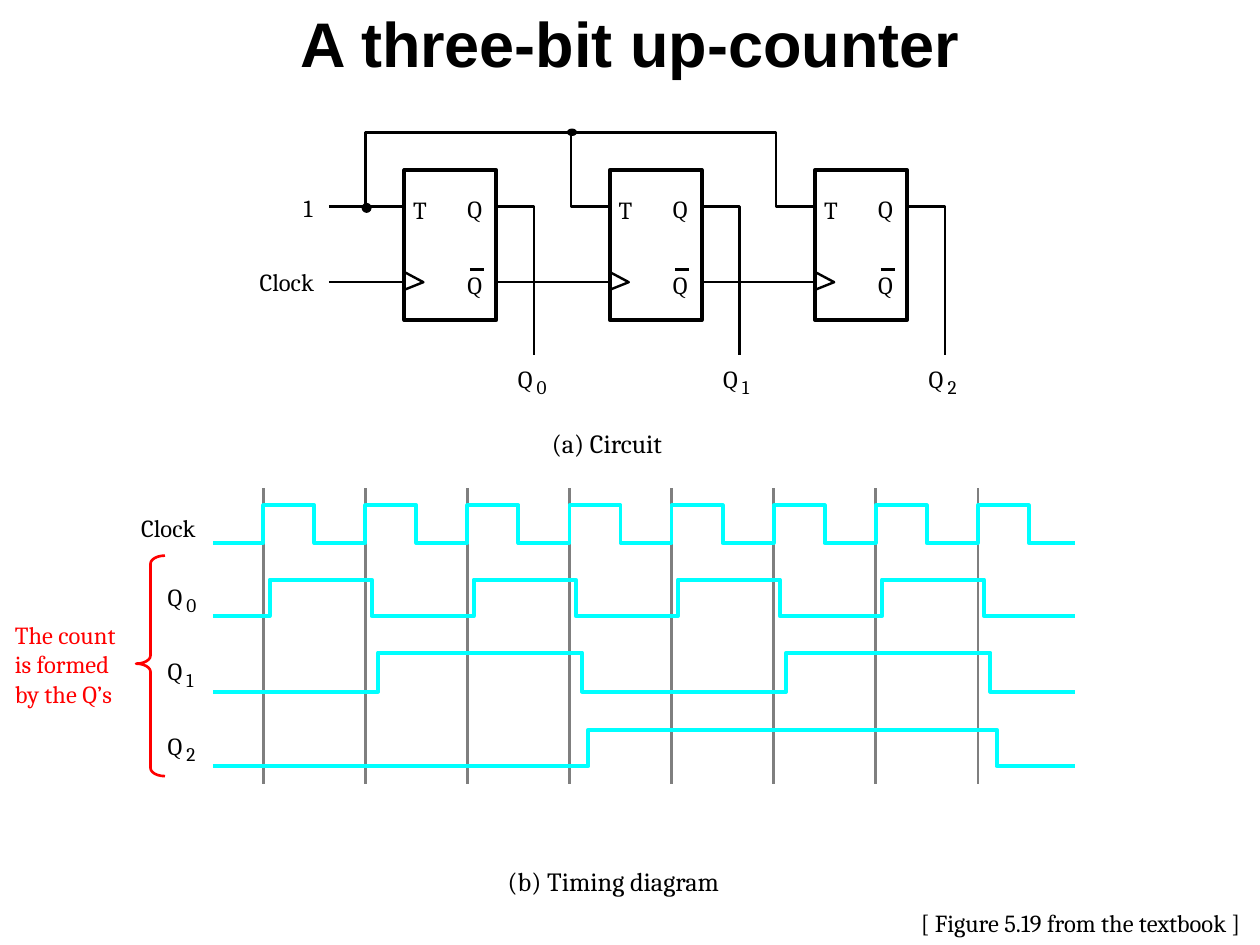
"""Build a slide showing a three-bit up-counter circuit and its timing diagram."""
from lxml import etree
from pptx import Presentation
from pptx.dml.color import RGBColor
from pptx.enum.shapes import MSO_CONNECTOR, MSO_SHAPE
from pptx.enum.text import MSO_ANCHOR, PP_ALIGN
from pptx.oxml.ns import qn
from pptx.util import Inches, Pt

STRAIGHT = MSO_CONNECTOR.STRAIGHT
RECTANGLE, OVAL, BRACE = MSO_SHAPE.RECTANGLE, MSO_SHAPE.OVAL, MSO_SHAPE.LEFT_BRACE
MIDDLE, TOP = MSO_ANCHOR.MIDDLE, MSO_ANCHOR.TOP
CENTER, LEFT = PP_ALIGN.CENTER, PP_ALIGN.LEFT
BLACK = RGBColor(0x00, 0x00, 0x00)
WHITE = RGBColor(0xFF, 0xFF, 0xFF)
GRAY = RGBColor(0x7F, 0x7F, 0x7F)
CYAN = RGBColor(0x00, 0xFF, 0xFF)
RED = RGBColor(0xFF, 0x00, 0x00)

TITLE = "A three-bit up-counter"
SOURCE = "[ Figure 5.19 from the textbook ]"
NOTE = ["The count", "is formed", "by the Q’s"]
LABELS = [
    ("1", 2.41, 1.53, 0.23, 14),
    ("Clock", 2.06, 2.12, 0.59, 14),
    ("(a) Circuit", 4.38, 3.39, 1.06, 15),
    ("Clock", 1.12, 4.07, 0.59, 14),
    ("(b) Timing diagram", 4.03, 6.87, 1.84, 15),
]
PIN_LABELS = [("T", 0.07, 1.55), ("Q", 0.5, 1.54), ("Q", 0.5, 2.14)]
STAGES = 3
FLIP_LEFT, FLIP_PITCH, FLIP_WIDTH, FLIP_TOP, FLIP_HEIGHT = 3.21, 1.63, 0.73, 1.35, 1.19
BUS_Y, DATA_Y, CLOCK_Y, OUTPUT_Y = 1.05, 1.64, 2.24, 2.82
INPUT_X, TAP_X = 2.61, 2.9
WIRE = 1.38
PERIOD, FIRST_EDGE, CYCLES = 0.81, 2.09, 8
WAVE_START, WAVE_END = 1.69, 8.53
CLOCK_LEVELS = (4.31, 4.01)
Q_LEVELS = [(4.89, 4.6), (5.49, 5.18), (6.08, 5.79)]
DELAY = 0.05


def write(frame, lines, size=14, color=BLACK, font="Cambria", bold=False,
          align=LEFT, anchor=TOP, inset=(0, 0)):
    """Fill a text frame with formatted lines."""
    frame.word_wrap = True
    frame.vertical_anchor = anchor
    frame.margin_left = frame.margin_right = Inches(inset[0])
    frame.margin_top = frame.margin_bottom = Inches(inset[1])
    for index, line in enumerate(lines):
        para = frame.paragraphs[0] if index == 0 else frame.add_paragraph()
        para.alignment = align
        span = para.add_run()
        span.text = line
        span.font.name, span.font.size, span.font.bold = font, Pt(size), bold
        span.font.color.rgb = color


def add_text(page, lines, left, top, width, height=0.26, **style):
    box = page.shapes.add_textbox(*map(Inches, (left, top, width, height)))
    write(box.text_frame, lines, **style)


def add_line(page, start, end, color=BLACK, weight=WIRE):
    line = page.shapes.add_connector(STRAIGHT, *map(Inches, start + end))
    line.line.color.rgb, line.line.width = color, Pt(weight)
    etree.SubElement(line._element.spPr, qn("a:effectLst"))


def finish(shape, fill, color, weight):
    shape.shadow.inherit = False
    if fill is None:
        shape.fill.background()
    else:
        shape.fill.solid()
        shape.fill.fore_color.rgb = fill
    shape.line.color.rgb, shape.line.width = color, Pt(weight)


def add_path(page, points, color=BLACK, weight=WIRE):
    corners = [(Inches(x), Inches(y)) for x, y in points]
    builder = page.shapes.build_freeform(*corners[0])
    builder.add_line_segments(corners[1:], close=False)
    finish(builder.convert_to_shape(), None, color, weight)


def add_preset(page, kind, left, top, width, height, fill=None, color=BLACK, weight=WIRE):
    shape = page.shapes.add_shape(kind, *map(Inches, (left, top, width, height)))
    finish(shape, fill, color, weight)
    return shape


def add_output_name(page, stage, left, top):
    add_text(page, ["Q"], left, top, 0.27)
    add_text(page, [str(stage)], left + 0.15, top + 0.09, 0.18, 0.21, size=11)


def add_wave(page, levels, edges):
    """Draw a signal that starts low and toggles at each edge."""
    points = [(WAVE_START, levels[0])]
    for index, x in enumerate(edges):
        points += [(x, levels[index % 2]), (x, levels[(index + 1) % 2])]
    points.append((WAVE_END, levels[len(edges) % 2]))
    add_path(page, points, CYAN, 2.25)


def draw_circuit(page):
    lefts = [FLIP_LEFT + FLIP_PITCH * stage for stage in range(STAGES)]
    for stage, left in enumerate(lefts):
        right = left + FLIP_WIDTH
        add_preset(page, RECTANGLE, left, FLIP_TOP, FLIP_WIDTH, FLIP_HEIGHT, WHITE, weight=2.25)
        for name, offset, top in PIN_LABELS:
            add_text(page, [name], left + offset, top, 0.27)
        add_line(page, (left + 0.52, 2.14), (left + 0.63, 2.14))
        add_path(page, [(left, 2.3), (left + 0.15, CLOCK_Y), (left, 2.16)])
        clock_start = lefts[stage - 1] + FLIP_WIDTH if stage else INPUT_X
        add_line(page, (clock_start, CLOCK_Y), (left, CLOCK_Y))
        add_path(page, [(right, DATA_Y), (right + 0.3, DATA_Y), (right + 0.3, OUTPUT_Y)])
        add_output_name(page, stage, left + 0.9, 2.89)
    last_tap = lefts[2] - 0.31
    middle_tap = lefts[1] - 0.31
    add_line(page, (INPUT_X, DATA_Y), (lefts[0], DATA_Y))
    add_path(page, [(TAP_X, DATA_Y), (TAP_X, BUS_Y), (last_tap, BUS_Y),
                    (last_tap, DATA_Y), (lefts[2], DATA_Y)])
    add_path(page, [(middle_tap, BUS_Y), (middle_tap, DATA_Y), (lefts[1], DATA_Y)])
    add_preset(page, OVAL, 2.88, 1.62, 0.06, 0.06, BLACK)
    add_preset(page, OVAL, 4.51, 1.03, 0.06, 0.04, BLACK)


def draw_timing(page):
    rises = [FIRST_EDGE + PERIOD * cycle for cycle in range(CYCLES)]
    for x in rises:
        add_line(page, (x, 6.22), (x, 3.87), GRAY)
    add_wave(page, CLOCK_LEVELS, [x + half for x in rises for half in (0, PERIOD / 2)])
    for stage, levels in enumerate(Q_LEVELS):
        step = 2 ** stage
        add_wave(page, levels, [x + DELAY * (stage + 1) for x in rises[step - 1::step]])
        add_output_name(page, stage, 1.33, 4.62 + 0.59 * stage)
    brace = add_preset(page, BRACE, 1.08, 4.41, 0.23, 1.75, color=RED, weight=1.5)
    brace.adjustments[0], brace.adjustments[1] = 0.28, 0.49
    add_text(page, NOTE, 0.02, 4.87, 1.1, 0.81, color=RED, inset=(0.1, 0.05))


def main():
    deck = Presentation()
    deck.slide_width, deck.slide_height = Inches(10), Inches(7.5)
    page = deck.slides.add_slide(deck.slide_layouts[5])
    title = page.shapes.title
    title.left, title.top, title.width, title.height = map(Inches, (0, 0, 10, 0.67))
    write(title.text_frame, [TITLE], size=36, font="Arial", bold=True,
          align=CENTER, anchor=MIDDLE, inset=(0.1, 0.05))
    draw_timing(page)
    draw_circuit(page)
    for text, left, top, width, size in LABELS:
        add_text(page, [text], left, top, width, size=size)
    add_text(page, [SOURCE], 7.21, 7.16, 2.79, 0.34, inset=(0.1, 0.05))
    deck.save("out.pptx")


if __name__ == "__main__":
    main()
